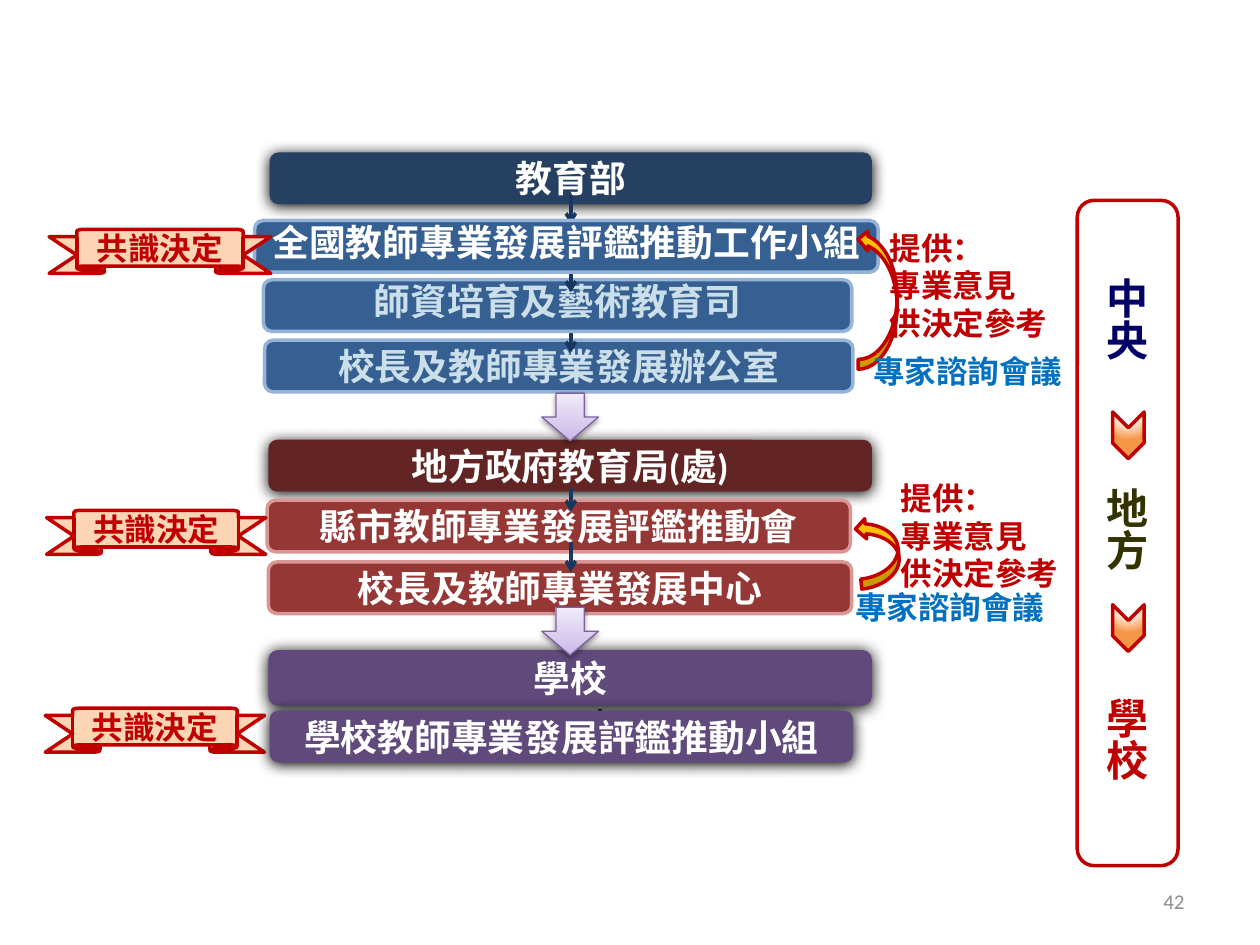
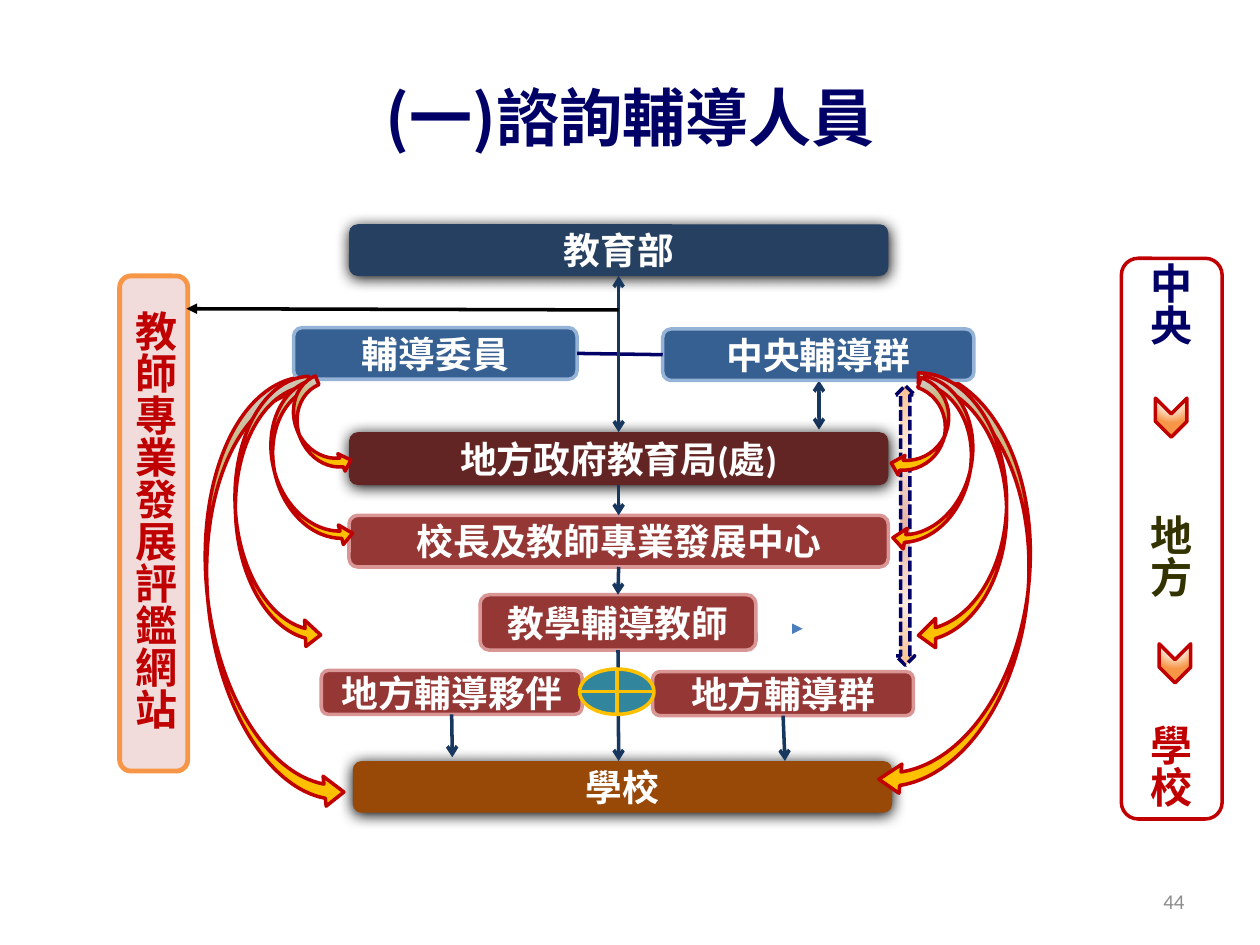
from dataclasses import dataclass
from typing import NamedTuple

from lxml.etree import SubElement
from pptx import Presentation
from pptx.dml.color import RGBColor
from pptx.enum.dml import MSO_LINE
from pptx.enum.shapes import MSO_CONNECTOR, MSO_SHAPE
from pptx.enum.text import MSO_ANCHOR, PP_ALIGN
from pptx.oxml import parse_xml
from pptx.oxml.ns import nsdecls, qn
from pptx.slide import Slide
from pptx.util import Emu, Pt

SCALE = 9144
CJK = "Noto Sans CJK SC"
WHITE = RGBColor(0xFF, 0xFF, 0xFF)
BLACK = RGBColor(0, 0, 0)
GREY = RGBColor(0x8C, 0x8C, 0x8C)
NAVY = RGBColor(0, 0, 0x66)
OLIVE = RGBColor(0x33, 0x33, 0)
RED = RGBColor(0xC0, 0, 0)
SKY = RGBColor(0, 0x70, 0xC0)
PALE = RGBColor(0xCB, 0xDF, 0xEB)
DARK = RGBColor(0x25, 0x40, 0x61)
BLUE = RGBColor(0x37, 0x60, 0x92)
EDGE = RGBColor(0x95, 0xB3, 0xD7)
STEEL = RGBColor(0x17, 0x37, 0x5E)
DOT = RGBColor(0x4B, 0x7E, 0xBC)
WINE = RGBColor(0x63, 0x25, 0x23)
BRICK = RGBColor(0x95, 0x37, 0x35)
ROSE = RGBColor(0xD9, 0x96, 0x94)
PLUM = RGBColor(0x60, 0x4A, 0x7B)
LILAC = RGBColor(0x7D, 0x60, 0xA0)
BROWN = RGBColor(0x98, 0x48, 0x07)
PEACH = RGBColor(0xFC, 0xD5, 0xB5)
PINK = RGBColor(0xF2, 0xDC, 0xDB)
ORANGE = RGBColor(0xF7, 0x96, 0x46)
GOLD = RGBColor(0xFF, 0xC0, 0)
TEAL = RGBColor(0x31, 0x85, 0x9C)


class Grad(NamedTuple):
    """A gradient: stops as (percent, hex) and the way it runs."""
    stops: tuple[tuple[int, str], ...]
    run: str


class Shade(NamedTuple):
    """An outer shadow falling straight down; blur and gap in points."""
    alpha: int
    blur: float
    gap: float


class Look(NamedTuple):
    """Fill, outline and shadow of a shape."""
    fill: RGBColor | Grad | None = None
    line: RGBColor | None = None
    width: float = 2
    shade: Shade | None = None
    dash: MSO_LINE | None = None


class Ink(NamedTuple):
    """Type size, colour, font and alignment of a text."""
    size: int = 21
    color: RGBColor = WHITE
    font: str = "Calibri"
    align: PP_ALIGN = PP_ALIGN.CENTER
    bold: bool = True
    lead: float | None = None


class Para(NamedTuple):
    """One paragraph with its own colour and the space before it."""
    text: str
    color: RGBColor
    gap: int = 0


@dataclass
class Item:
    """A shape with its frame in px, look and text."""
    box: tuple[int, int, int, int]
    look: Look
    text: str | tuple[Para, ...] = ""
    ink: Ink = Ink()
    kind: MSO_SHAPE = MSO_SHAPE.ROUNDED_RECTANGLE
    adj: tuple[float, ...] = ()
    turn: float = 0
    flip: bool = False


@dataclass
class Link:
    """A straight line in px; joins name a box by its text and a side."""
    ends: tuple[int, int, int, int]
    color: RGBColor = STEEL
    head: str = ""
    tail: str = "arrow"
    width: float = 2
    start: tuple[str, int] | None = None
    stop: tuple[str, int] | None = None


def focus(left: int, top: int, right: int, low: int) -> str:
    """Return the XML of a circular gradient run."""
    return (f'<a:path path="circle"><a:fillToRect l="{left}000" t="{top}000" '
            f'r="{right}000" b="{low}000"/></a:path>')


ABOVE = focus(50, -80, 50, 180)
GLOW = Grad(((0, "FFFFFF"), (100, "FFC000")), ABOVE)
EMBER = Grad(((0, "FFFFFF"), (35, "FFFFFF"), (100, "F79646")), ABOVE)
MIST = Grad(((0, "C9B5E8"), (35, "D8CBEE"), (100, "F0EAF9")),
            '<a:lin ang="16200000" scaled="1"/>')
SAND = Grad(((2, "E5B5A7"), (56, "FDEADA"), (100, "FAC090")), focus(50, 50, 50, 50))

DEEP = Shade(100, 8.5, 1)
TOP, LOCAL, UNIT, SCHOOL = (Look(c, shade=DEEP) for c in (DARK, WINE, PLUM, BROWN))
STATE, TOWN = Look(BLUE, EDGE), Look(BRICK, ROSE)
BARE, FRAME = Look(), Look(line=RED)
PLAIN, ARIAL = Ink(), Ink(font="Arial")
NOTE = Ink(18, RED, CJK, PP_ALIGN.LEFT)
MEET = Ink(18, SKY, CJK)
TALL = Ink(24, RED, CJK, lead=24)
HEAD = Ink(36, NAVY, CJK)
FOOT = Ink(12, GREY, align=PP_ALIGN.RIGHT, bold=False)
ADVICE = "提供：\v專業意見\v供決定參考"
BUREAU = "地方政府教育局(處)"
CENTER = "校長及教師專業發展中心"
THIN = (0.123, 0.332, 0.193)


def px(size: int) -> Emu:
    """Turn px into EMU."""
    return Emu(size * SCALE)


def paint(shape, look: Look) -> None:
    """Apply a look to a shape."""
    shape.shadow.inherit = False
    props = shape._element.spPr
    if isinstance(look.fill, RGBColor):
        shape.fill.solid()
        shape.fill.fore_color.rgb = look.fill
    else:
        shape.fill.background()
    if isinstance(look.fill, Grad):
        stops = "".join(f'<a:gs pos="{at}000"><a:srgbClr val="{tone}"/></a:gs>'
                        for at, tone in look.fill.stops)
        grad = parse_xml(f'<a:gradFill {nsdecls("a")} rotWithShape="1">'
                         f'<a:gsLst>{stops}</a:gsLst>{look.fill.run}</a:gradFill>')
        props.replace(props.find(qn("a:noFill")), grad)
    if look.line is None:
        shape.line.fill.background()
    else:
        shape.line.color.rgb = look.line
        shape.line.width = Pt(look.width)
    if look.dash is not None:
        shape.line.dash_style = look.dash
    if look.shade:
        alpha, blur, gap = look.shade
        props.find(qn("a:effectLst")).append(parse_xml(
            f'<a:outerShdw {nsdecls("a")} blurRad="{Pt(blur)}" dist="{Pt(gap)}" '
            f'dir="5400000" algn="t" rotWithShape="0"><a:srgbClr val="000000">'
            f'<a:alpha val="{alpha}000"/></a:srgbClr></a:outerShdw>'))


def write(shape, text: str | tuple[Para, ...], ink: Ink) -> None:
    """Write centred-height text in a shape."""
    frame = shape.text_frame
    frame.word_wrap = True
    frame.vertical_anchor = MSO_ANCHOR.MIDDLE
    paras = (Para(text, ink.color),) if isinstance(text, str) else text
    form = {"size": Pt(ink.size), "bold": ink.bold, "name": ink.font}
    for num, para in enumerate(paras):
        part = frame.add_paragraph() if num else frame.paragraphs[0]
        part.text = para.text
        part.alignment = ink.align
        if ink.lead:
            part.line_spacing = Pt(ink.lead)
        if para.gap:
            part.space_before = Pt(para.gap)
        for run in part.runs:
            for key, val in form.items():
                setattr(run.font, key, val)
            run.font.color.rgb = para.color
            SubElement(run.font._element, qn("a:ea"), typeface=CJK)


def place(slide: Slide, item: Item):
    """Draw one shape."""
    shape = slide.shapes.add_shape(item.kind, *map(px, item.box))
    for num, val in enumerate(item.adj):
        shape.adjustments[num] = val
    shape.rotation = item.turn
    if item.flip:
        shape._element.spPr.find(qn("a:xfrm")).set("flipH", "1")
    paint(shape, item.look)
    if item.text:
        write(shape, item.text, item.ink)
    return shape


def join(slide: Slide, link: Link, known: dict) -> None:
    """Draw one line, joined to known boxes where named."""
    line = slide.shapes.add_connector(MSO_CONNECTOR.STRAIGHT, *map(px, link.ends))
    line.line.color.rgb = link.color
    line.line.width = Pt(link.width)
    for tag, end in (("a:headEnd", link.head), ("a:tailEnd", link.tail)):
        if end:
            SubElement(line.line._get_or_add_ln(), qn(tag), type=end)
    SubElement(line._element.spPr, qn("a:effectLst"))
    for hook, spot in ((line.begin_connect, link.start), (line.end_connect, link.stop)):
        if spot:
            hook(known[spot[0]], spot[1])


def label(slide: Slide, box: tuple[int, int, int, int], text: str, ink: Ink) -> None:
    """Add a plain text box."""
    write(slide.shapes.add_textbox(*map(px, box)), text, ink)


def build(deck, page: str, items: list[Item | Link], title: str = "") -> None:
    """Add a slide, drawing its items from back to front."""
    slide = deck.slides.add_slide(deck.slide_layouts[6])
    known = {}
    for item in items:
        if isinstance(item, Link):
            join(slide, item, known)
        else:
            known[item.text] = place(slide, item)
    if title:
        label(slide, (50, 30, 900, 125), title, HEAD)
    label(slide, (717, 695, 233, 40), page, FOOT)


def curve(box: tuple[int, int, int, int], turn: float = 0, flip: bool = False,
          adj: tuple[float, ...] = THIN, fill: RGBColor | Grad = GLOW) -> Item:
    """Return a curved arrow."""
    return Item(box, Look(fill, RED), kind=MSO_SHAPE.CURVED_RIGHT_ARROW,
                adj=adj, turn=turn, flip=flip)


def tower(box: tuple[int, int, int, int], gaps: tuple[int, int],
          marks: list[tuple[int, int]], size: int) -> list[Item]:
    """Return the tall frame of levels and its chevrons."""
    levels = (Para("中央", NAVY), Para("地方", OLIVE, gaps[0]), Para("學校", RED, gaps[1]))
    return [Item(box, FRAME, levels, TALL)] + [
        Item((x, y, size, 25), Look(EMBER, RED), kind=MSO_SHAPE.CHEVRON, turn=90)
        for x, y in marks]


def drop(x: int, top: int, low: int) -> Link:
    """Return a downward arrow."""
    return Link((x, top, x, low))


def groups() -> list[Item | Link]:
    """Return the items of the committee slide."""
    tight = Ink(lead=20.2)
    ribbons = [Item((x, y, w, 35), Look(PEACH, RED), "共識決定", Ink(18, RED),
                    MSO_SHAPE.UP_RIBBON, (0.167, 0.75))
               for x, y, w in ((39, 182, 176), (37, 405, 174), (36, 562, 174))]
    falls = [Item((430, y, 45, 38), Look(MIST, LILAC, 0.75, Shade(38, 3.1, 1.6)),
                  kind=MSO_SHAPE.DOWN_ARROW) for y in (312, 482)]
    return [
        Item((214, 121, 478, 41), TOP, "教育部"),
        Item((210, 270, 467, 41), STATE, "校長及教師專業發展辦公室", Ink(color=PALE, font="Arial")),
        drop(453, 257, 280),
        Item((209, 222, 467, 41), STATE, "師資培育及藝術教育司", tight._replace(color=PALE)),
        drop(453, 155, 178),
        Item((213, 349, 479, 41), LOCAL, BUREAU),
        Item((212, 397, 463, 41), TOWN, "縣市教師專業發展評鑑推動會"),
        drop(453, 387, 406),
        drop(453, 208, 232),
        Item((202, 175, 495, 41), STATE, "全國教師專業發展評鑑推動工作小組", tight),
        drop(476, 563, 586),
        Item((213, 446, 463, 41), TOWN, CENTER, ARIAL),
        Item((213, 516, 479, 44), UNIT, "學校"),
        *ribbons,
        Item((692, 181, 162, 91), BARE, ADVICE, NOTE),
        curve((681, 182, 31, 111), 180, adj=(), fill=GOLD),
        Item((680, 278, 176, 32), BARE, "專家諮詢會議", MEET),
        Item((701, 383, 155, 84), BARE, ADVICE, NOTE),
        curve((681, 410, 32, 56), 174, adj=(), fill=GOLD),
        Item((666, 466, 176, 32), BARE, "專家諮詢會議", MEET),
        *tower((855, 159, 80, 528), (72, 72), [(877, 486), (877, 333)], 37),
        Item((214, 564, 463, 41), UNIT, "學校教師專業發展評鑑推動小組", ARIAL),
        *falls,
        drop(453, 430, 454),
    ]


def guides() -> list[Item | Link]:
    """Return the items of the advisers slide."""
    site = (Para("教師專業發", RED), Para("展評鑑網站", RED))
    return [
        Item((711, 306, 15, 222), Look(SAND, NAVY, dash=MSO_LINE.SQUARE_DOT),
             kind=MSO_SHAPE.UP_DOWN_ARROW, adj=(0.395, 0.5)),
        Link((636, 499, 637, 499), DOT, tail="triangle", width=0.75),
        Item((280, 604, 428, 41), SCHOOL, "學校"),
        Link((650, 302, 650, 341), head="arrow"),
        curve((165, 303, 92, 343), 354.2, adj=(0.123, 0.259, 0.164)),
        curve((713, 298, 103, 338), 5.7, True, (0.104, 0.225, 0.164)),
        Item((233, 260, 225, 41), STATE, "輔導委員"),
        Item((277, 178, 428, 41), TOP, "教育部"),
        Item((526, 261, 247, 41), STATE, "中央輔導群"),
        Item((277, 343, 428, 42), LOCAL, BUREAU),
        Item((518, 533, 207, 35), TOWN, "地方輔導群"),
        Item((277, 409, 428, 41), TOWN, CENTER, ARIAL),
        Item((255, 532, 207, 35), TOWN, "地方輔導夥伴"),
        Item((381, 472, 219, 44), TOWN, "教學輔導教師"),
        Link((458, 280, 526, 282), NAVY, tail="", start=("輔導委員", 3), stop=("中央輔導群", 1)),
        Link((491, 219, 491, 343), head="arrow", start=("教育部", 2), stop=(BUREAU, 0)),
        Link((491, 385, 491, 409), start=(BUREAU, 2), stop=(CENTER, 0)),
        Link((491, 450, 491, 472), start=(CENTER, 2), stop=("教學輔導教師", 0)),
        Link((491, 516, 491, 604), start=("教學輔導教師", 2)),
        Link((359, 567, 359, 601), start=("地方輔導夥伴", 2)),
        Link((623, 568, 623, 604), start=("地方輔導群", 2)),
        Link((462, 550, 518, 550), NAVY, tail="", start=("地方輔導夥伴", 3), stop=("地方輔導群", 1)),
        curve((729, 296, 70, 220), flip=True),
        curve((720, 302, 50, 139), 11.1, True),
        curve((717, 303, 33, 80), 19.3, True, ()),
        curve((187, 300, 63, 216), 357.3),
        *tower((890, 205, 80, 445), (96, 72), [(917, 514), (914, 319)], 31),
        curve((218, 305, 48, 134), 345.7),
        curve((237, 301, 30, 80), 337.1, adj=()),
        Item((460, 531, 59, 36), Look(TEAL, GOLD), kind=MSO_SHAPE.FLOWCHART_OR),
        Item((95, 219, 54, 393), Look(PINK, ORANGE, 2.75), site, TALL),
        Link((491, 246, 148, 245), BLACK, tail="triangle"),
    ]


def main() -> None:
    """Build and save the deck."""
    deck = Presentation()
    deck.slide_width, deck.slide_height = px(1000), px(750)
    build(deck, "42", groups())
    build(deck, "44", guides(), "(一)諮詢輔導人員")
    deck.save("out.pptx")


if __name__ == "__main__":
    main()
